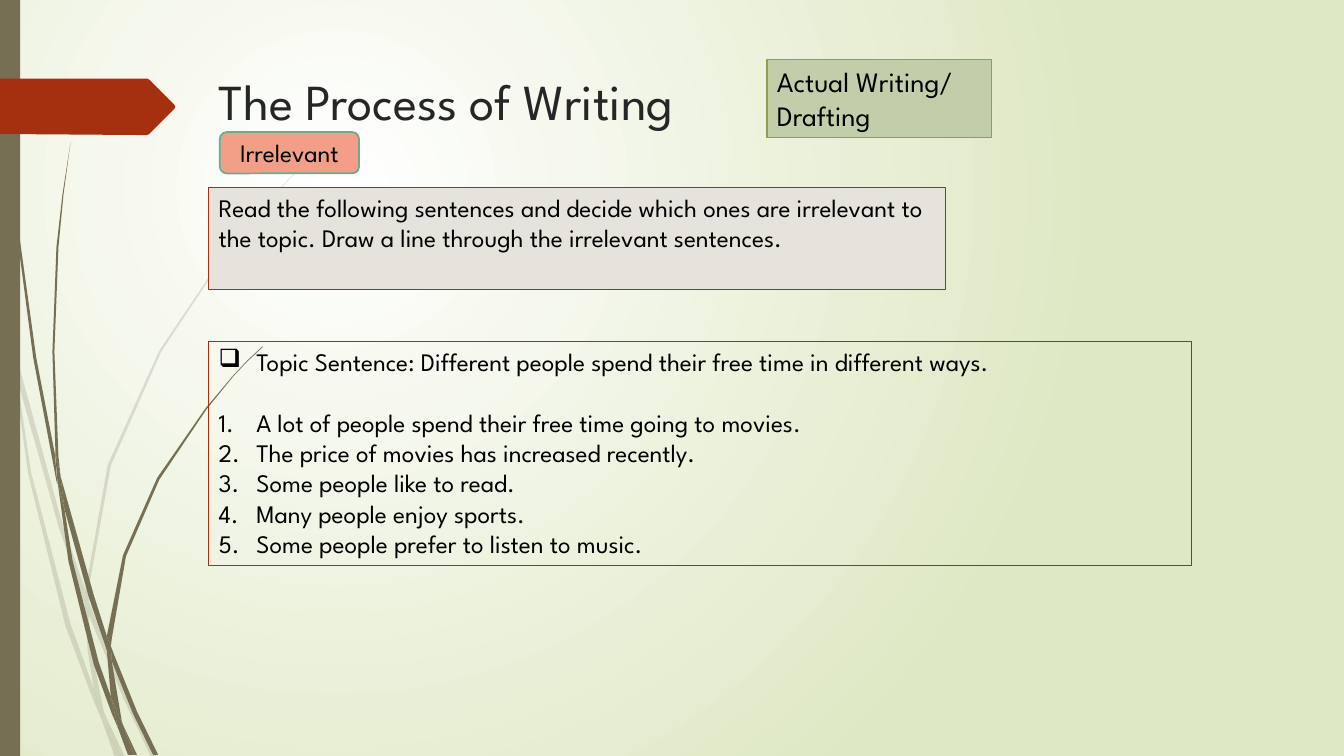
import pptx
import pptx.dml.color
import pptx.enum.shapes
import pptx.enum.text
import pptx.oxml.ns
import pptx.util
from lxml import etree

Cm = pptx.util.Cm
Pt = pptx.util.Pt
RGBColor = pptx.dml.color.RGBColor
Preset = pptx.enum.shapes.MSO_SHAPE
qn = pptx.oxml.ns.qn

FONT = "League Spartan"
WHITE = RGBColor(0xFF, 0xFF, 0xFF)
BLACK = RGBColor(0x00, 0x00, 0x00)
CHARCOAL = RGBColor(0x26, 0x26, 0x26)
PALE_GREEN = RGBColor(0xDF, 0xE8, 0xC4)
OLIVE_BROWN = RGBColor(0x76, 0x6F, 0x54)
RUST = RGBColor(0xA5, 0x30, 0x10)
SAGE = RGBColor(0xC2, 0xCE, 0xA9)
LEAF_GREEN = RGBColor(0x8B, 0xA2, 0x49)
STONE = RGBColor(0xE5, 0xE3, 0xDB)
SALMON = RGBColor(0xF3, 0x9E, 0x87)
TEAL = RGBColor(0x6A, 0xAC, 0x91)

# Outlines are in hundredths of an inch.
OUTLINE_UNIT = Cm(0.0254)
FAINT_BLADES = [
    [(11, 350), (9, 322), (0, 282), (0, 299), (10, 344)],
    [(58, 522), (84, 599), (85, 586), (62, 520), (14, 345), (17, 376)],
    [(92, 607), (88, 596), (88, 610), (123, 694), (150, 751), (155, 751),
     (127, 692)],
    [(119, 751), (124, 751), (105, 711)],
    [(93, 683), (70, 619), (31, 469), (17, 376), (11, 350), (28, 470),
     (65, 621), (92, 693), (101, 714), (99, 707)],
    [(84, 599), (87, 646), (93, 683), (96, 692), (105, 711), (103, 706),
     (91, 646), (88, 610), (88, 608)],
    [(88, 584), (110, 462), (160, 349), (229, 245), (268, 198), (290, 175),
     (312, 154), (312, 153), (289, 175), (268, 197), (228, 244), (158, 348),
     (107, 461), (85, 584), (85, 586), (88, 596)],
    [(101, 714), (114, 751), (119, 751)],
    [(88, 608), (88, 610), (88, 596), (85, 586), (84, 599)],
    [(96, 692), (93, 683), (99, 707), (101, 714), (119, 751), (105, 711)],
]
DARK_BLADES = [
    [(7, 110), (17, 233), (33, 355), (56, 477), (57, 481), (55, 457),
     (55, 453), (36, 355), (19, 232), (8, 109), (5, 48), (4, 0), (3, 0),
     (4, 48)],
    [(88, 592), (106, 645), (106, 631), (93, 590), (60, 472), (64, 505)],
    [(113, 649), (110, 641), (111, 656), (132, 708), (152, 749), (157, 749),
     (136, 706)],
    [(110, 691), (98, 657), (72, 556), (64, 505), (57, 477), (68, 557),
     (93, 659), (111, 708), (117, 722), (116, 717)],
    [(60, 472), (58, 453), (54, 349), (58, 245), (63, 193), (70, 141),
     (62, 193), (56, 245), (52, 349), (55, 449)],
    [(133, 749), (136, 749), (122, 719)],
    [(57, 477), (64, 505), (60, 472), (55, 449), (55, 453)],
    [(111, 633), (125, 552), (158, 476), (205, 406), (231, 374), (245, 359),
     (261, 344), (260, 344), (245, 358), (231, 373), (204, 405), (156, 474),
     (122, 551), (106, 631), (110, 641)],
    [(117, 722), (127, 749), (131, 749)],
    [(106, 645), (110, 691), (116, 706), (122, 719), (121, 716), (111, 656),
     (109, 651)],
    [(106, 645), (109, 651), (111, 656), (110, 641), (106, 631)],
    [(116, 706), (110, 691), (116, 717), (117, 722), (130, 749), (133, 749),
     (122, 719)],
]
ARROW_TAG = [(0, 78), (146, 78), (148, 79), (173, 104), (174, 106),
             (173, 108), (148, 133), (146, 134), (136, 134), (0, 133)]


def paint_background(slide):
    """Fill the slide with a circular gradient centred in its upper left quarter."""
    fill = slide.background.fill
    fill.gradient()
    for stop, color in zip(fill.gradient_stops, (WHITE, PALE_GREEN)):
        stop.color.rgb = color
    gradient = slide.background._cSld.find(".//" + qn("a:gradFill"))
    gradient.remove(gradient.find(qn("a:lin")))
    circle = etree.SubElement(gradient, qn("a:path"), path="circle")
    etree.SubElement(circle, qn("a:fillToRect"),
                     l="50000", t="50000", r="100000", b="100000")


def style_shape(shape, fill=None, line=None, line_width=0.75):
    shape.shadow.inherit = False
    if fill is None:
        shape.fill.background()
    else:
        shape.fill.solid()
        shape.fill.fore_color.rgb = fill
    if line is None:
        shape.line.fill.background()
    else:
        shape.line.color.rgb = line
        shape.line.width = Pt(line_width)


def add_outline(shapes, points, color, opacity=100):
    builder = shapes.build_freeform(*points[0], scale=OUTLINE_UNIT)
    builder.add_line_segments(points[1:], close=True)
    shape = builder.convert_to_shape()
    style_shape(shape, color)
    if opacity < 100:
        color_element = shape._element.spPr.find(".//" + qn("a:srgbClr"))
        etree.SubElement(color_element, qn("a:alpha"), val=str(opacity * 1000))


def add_grass(slide, blades, opacity=100):
    group = slide.shapes.add_group_shape()
    for blade in blades:
        add_outline(group.shapes, blade, OLIVE_BROWN, opacity)


def write_text(shape, text, size, color=BLACK, centred=False):
    frame = shape.text_frame
    frame.word_wrap = True
    frame.text = text
    anchors = pptx.enum.text.MSO_ANCHOR
    alignments = pptx.enum.text.PP_ALIGN
    frame.vertical_anchor = anchors.MIDDLE if centred else anchors.TOP
    for paragraph in frame.paragraphs:
        paragraph.alignment = alignments.CENTER if centred else alignments.LEFT
        for run in paragraph.runs:
            run.font.name = FONT
            run.font.size = Pt(size)
            run.font.color.rgb = color


def add_panel(slide, preset, left, top, width, height, text, size=18,
              centred=False, **style):
    panel = slide.shapes.add_shape(preset, Cm(left), Cm(top), Cm(width), Cm(height))
    style_shape(panel, **style)
    write_text(panel, text, size, centred=centred)
    return panel


def add_bullet(paragraph, tag, **attributes):
    """Give the paragraph a hanging indent and the bullet element named by tag."""
    properties = paragraph._p.get_or_add_pPr()
    properties.set("marL", str(Cm(0.95)))
    properties.set("indent", str(-Cm(0.95)))
    etree.SubElement(properties, qn(tag), attributes)


def add_exercise(slide):
    sentences = [
        "Topic Sentence: Different people spend their free time in different ways.",
        "A lot of people spend their free time going to movies.",
        "The price of movies has increased recently.",
        "Some people like to read.",
        "Many people enjoy sports.",
        "Some people prefer to listen to music.",
    ]
    panel = add_panel(slide, Preset.RECTANGLE, 5.26, 8.61, 24.77, 5.64,
                      "\n".join(sentences), line=RUST)
    topic, *numbered = panel.text_frame.paragraphs
    numbered[0].space_before = Pt(21.6)
    add_bullet(topic, "a:buChar", char="❑")
    for paragraph in numbered:
        add_bullet(paragraph, "a:buAutoNum", type="arabicPeriod")


def main():
    presentation = pptx.Presentation()
    presentation.slide_width = Cm(33.87)
    presentation.slide_height = Cm(19.05)
    slide = presentation.slides.add_slide(presentation.slide_layouts[6])

    paint_background(slide)
    add_grass(slide, FAINT_BLADES, opacity=20)
    add_grass(slide, DARK_BLADES)
    side_bar = slide.shapes.add_shape(Preset.RECTANGLE, 0, 0, Cm(0.51), Cm(19.05))
    style_shape(side_bar, OLIVE_BROWN)
    add_outline(slide.shapes, ARROW_TAG, RUST)

    title = slide.shapes.add_textbox(Cm(5.26), Cm(1.63), Cm(24.77), Cm(1.85))
    write_text(title, "The Process of Writing", 36, CHARCOAL)
    add_panel(slide, Preset.RECTANGLE, 19.33, 1.5, 5.66, 1.96,
              "Actual Writing/\nDrafting", size=20, fill=SAGE, line=LEAF_GREEN)
    add_panel(slide, Preset.RECTANGLE, 5.26, 4.72, 18.57, 2.57,
              "Read the following sentences and decide which ones are irrelevant to "
              "the topic. Draw a line through the irrelevant sentences.",
              fill=STONE, line=RUST)
    add_exercise(slide)
    add_panel(slide, Preset.ROUNDED_RECTANGLE, 5.54, 3.33, 3.51, 1.04, "Irrelevant",
              centred=True, fill=SALMON, line=TEAL, line_width=1.25)

    presentation.save("out.pptx")


if __name__ == "__main__":
    main()
